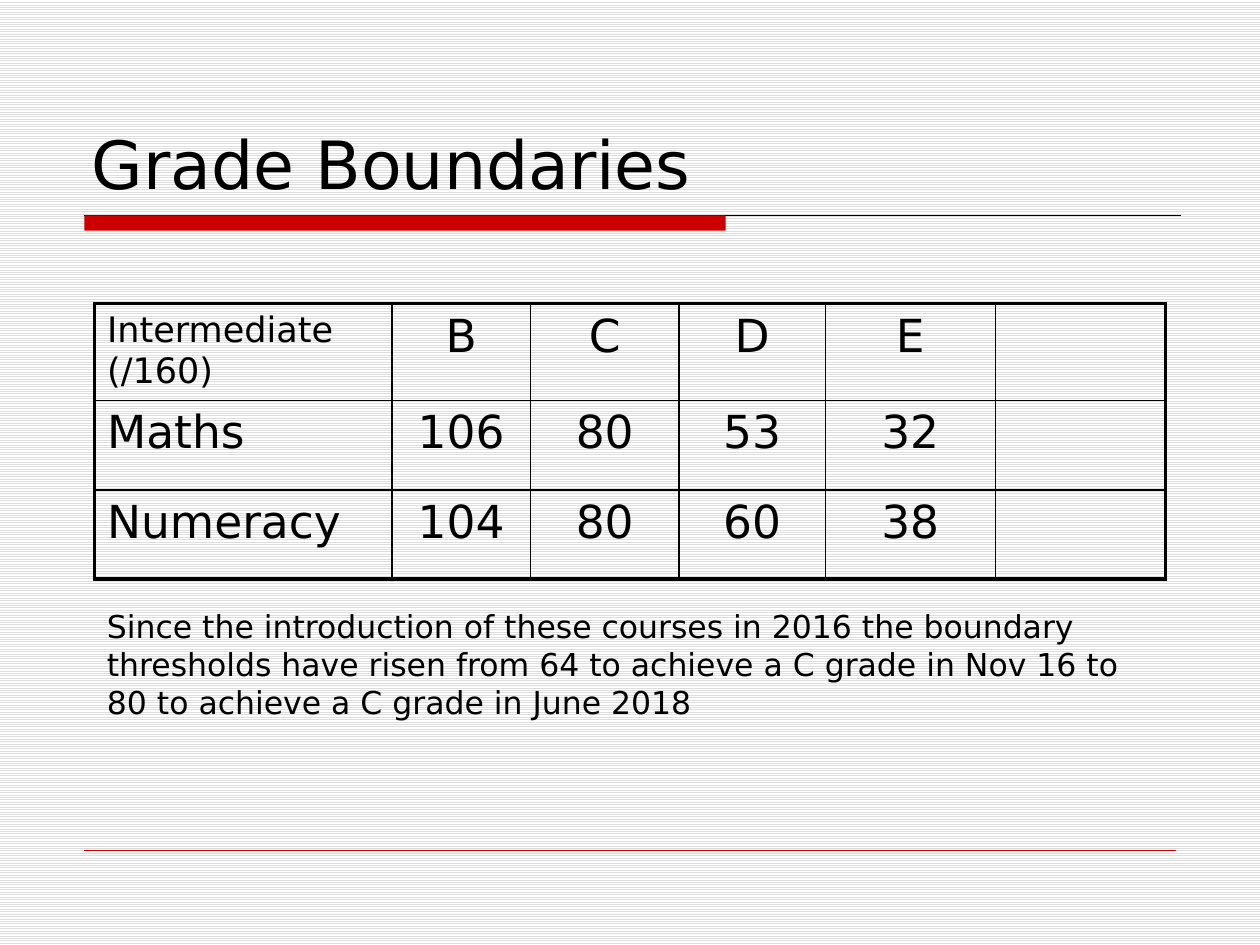
from dataclasses import dataclass

from lxml.etree import SubElement
from pptx import Presentation
from pptx.dml.color import RGBColor
from pptx.enum.dml import MSO_PATTERN
from pptx.enum.shapes import MSO_CONNECTOR, MSO_SHAPE
from pptx.enum.text import MSO_ANCHOR, PP_ALIGN
from pptx.oxml.ns import qn
from pptx.util import Inches, Pt


@dataclass(frozen=True)
class Theme:
    font: str = "DejaVu Sans"
    ink: str = "000000"
    red: str = "CC0000"
    stripe: str = "DDDDDD"
    paper: str = "FFFFFF"
    title: float = 38
    cell: float = 26
    head: float = 20
    note: float = 18
    thin: float = 1
    thick: float = 2.25


THEME = Theme()
GRADES = [
    ["Intermediate (/160)", "B", "C", "D", "E", ""],
    ["Maths", "106", "80", "53", "32", ""],
    ["Numeracy", "104", "80", "60", "38", ""],
]
WIDTHS = [2.36, 1.1, 1.18, 1.16, 1.35, 1.35]
HEIGHT = 0.71
NOTE = (
    "Since the introduction of these courses in 2016 the boundary thresholds "
    "have risen from 64 to achieve a C grade in Nov 16 to 80 to achieve a C "
    "grade in June 2018"
)


def color(code):
    return RGBColor.from_string(code)


def write(frame, text, size, align=PP_ALIGN.LEFT, anchor=MSO_ANCHOR.TOP):
    frame.word_wrap = True
    frame.vertical_anchor = anchor
    para = frame.paragraphs[0]
    para.alignment = align
    run = para.add_run()
    run.text = text
    run.font.name = THEME.font
    run.font.size = Pt(size)
    run.font.color.rgb = color(THEME.ink)


def add_text(slide, box, text, **style):
    shape = slide.shapes.add_textbox(*map(Inches, box))
    write(shape.text_frame, text, **style)


def add_bar(slide, box):
    bar = slide.shapes.add_shape(MSO_SHAPE.RECTANGLE, *map(Inches, box))
    bar.shadow.inherit = False
    bar.fill.solid()
    bar.fill.fore_color.rgb = color(THEME.red)
    bar.line.fill.background()


def add_rule(slide, left, right, top, shade, width):
    ends = map(Inches, (left, top, right, top))
    rule = slide.shapes.add_connector(MSO_CONNECTOR.STRAIGHT, *ends)
    rule.line.color.rgb = color(shade)
    rule.line.width = Pt(width)
    SubElement(rule._element.spPr, qn("a:effectLst"))


def set_edge(cell, side, width):
    props = cell._tc.get_or_add_tcPr()
    edge = SubElement(props, qn(f"a:ln{side}"), w=str(Pt(width)))
    fill = SubElement(edge, qn("a:solidFill"))
    SubElement(fill, qn("a:srgbClr"), val=THEME.ink)


def add_grid(slide, left, top, data):
    rows, cols = len(data), len(WIDTHS)
    box = map(Inches, (left, top, sum(WIDTHS), HEIGHT * rows))
    table = slide.shapes.add_table(rows, cols, *box).table
    table.first_row = table.horz_banding = False
    for col, width in zip(table.columns, WIDTHS):
        col.width = Inches(width)
    for r, values in enumerate(data):
        table.rows[r].height = Inches(HEIGHT)
        for c, text in enumerate(values):
            cell = table.cell(r, c)
            outer = {"L": c == 0, "R": c == cols - 1, "T": r == 0, "B": r == rows - 1}
            for side, edge in outer.items():
                set_edge(cell, side, THEME.thick if edge else THEME.thin)
            cell.fill.background()
            if text:
                size = THEME.head if r == c == 0 else THEME.cell
                align = PP_ALIGN.CENTER if c else PP_ALIGN.LEFT
                write(cell.text_frame, text, size, align=align)


def main():
    deck = Presentation()
    deck.slide_width, deck.slide_height = Inches(10), Inches(7.5)
    slide = deck.slides.add_slide(deck.slide_layouts[6])
    back = slide.background.fill
    back.patterned()
    back.pattern = MSO_PATTERN.LIGHT_HORIZONTAL
    back.fore_color.rgb = color(THEME.stripe)
    back.back_color.rgb = color(THEME.paper)

    add_rule(slide, 0.67, 9.37, 1.71, THEME.ink, 0.75)
    add_bar(slide, (0.67, 1.71, 5.09, 0.12))
    add_rule(slide, 0.67, 9.33, 6.75, THEME.red, 0.25)
    add_text(slide, (0.63, 0.33, 8.75, 1.33), "Grade Boundaries",
             size=THEME.title, anchor=MSO_ANCHOR.BOTTOM)
    add_grid(slide, 0.75, 2.41, GRADES)
    add_text(slide, (0.75, 4.77, 8.51, 1.01), NOTE, size=THEME.note)
    deck.save("out.pptx")


if __name__ == "__main__":
    main()
